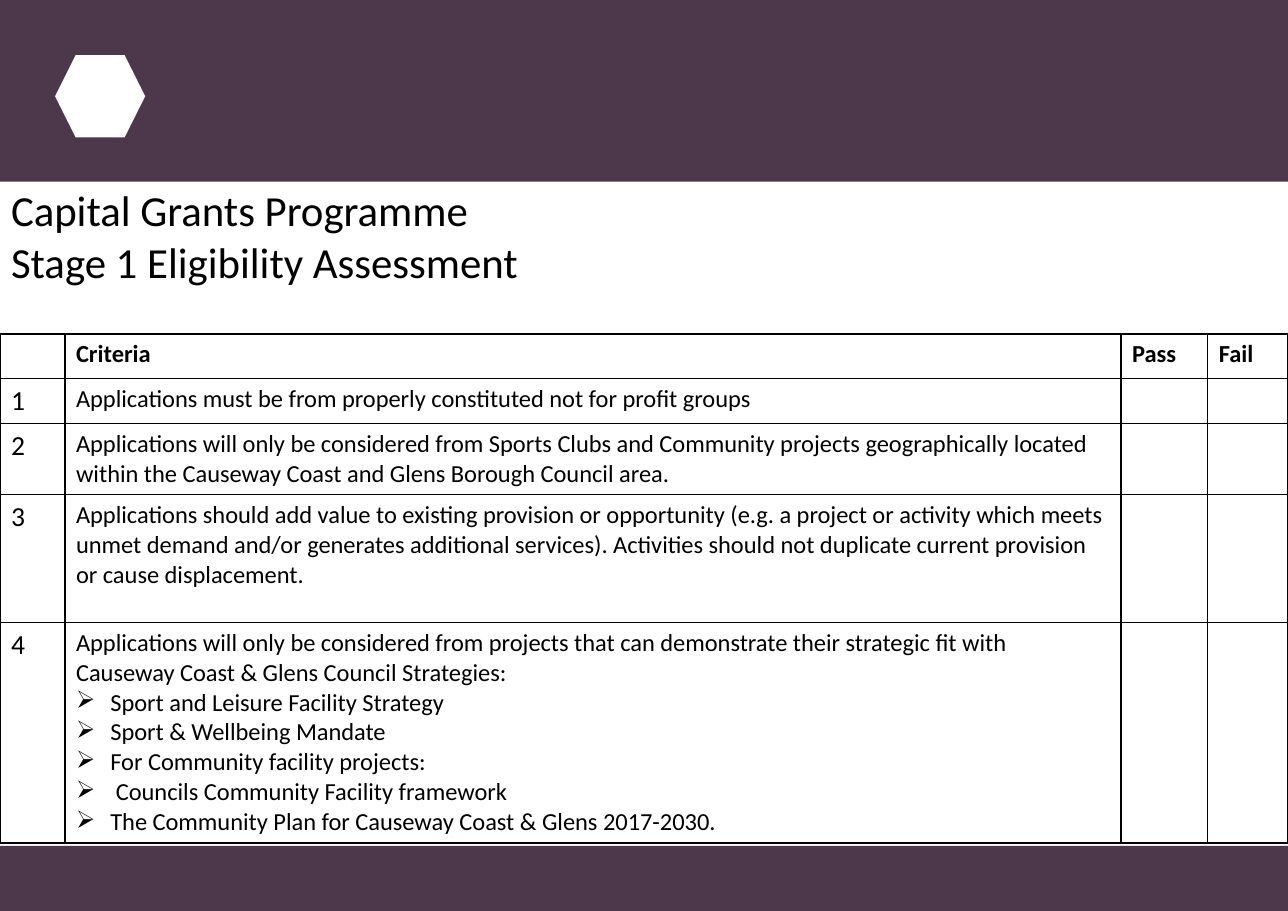
from lxml import etree
from pptx import Presentation
from pptx.dml.color import RGBColor
from pptx.enum.shapes import MSO_SHAPE
from pptx.enum.text import MSO_ANCHOR, MSO_AUTO_SIZE, PP_ALIGN
from pptx.oxml.ns import qn
from pptx.util import Cm, Pt

RECTANGLE = MSO_SHAPE.RECTANGLE
HEXAGON = MSO_SHAPE.HEXAGON
TOP = MSO_ANCHOR.TOP
LEFT = PP_ALIGN.LEFT
NO_AUTOFIT = MSO_AUTO_SIZE.NONE

PLUM = RGBColor(0x4C, 0x37, 0x4B)
WHITE = RGBColor(0xFF, 0xFF, 0xFF)
BLACK = RGBColor(0x00, 0x00, 0x00)
FONT = "Calibri"
TITLE_ONLY = 5

SLIDE_WIDTH, SLIDE_HEIGHT = Cm(29.7), Cm(21)
HEADER_HEIGHT = Cm(4.19)
FOOTER_HEIGHT = Cm(1.5)
COLUMN_WIDTHS = [Cm(1.5), Cm(24.35), Cm(2), Cm(1.85)]
ROW_HEIGHTS = [Cm(1.03), Cm(1.03), Cm(1.62), Cm(2.95), Cm(5)]

TITLE_LINES = ["Capital Grants Programme", "Stage 1 Eligibility Assessment"]
HEADINGS = ["", "Criteria", "Pass", "Fail"]
CRITERIA = [
    "Applications must be from properly constituted not for profit groups",
    "Applications will only be considered from Sports Clubs and Community projects "
    "geographically located within the Causeway Coast and Glens Borough Council area.",
    "Applications should add value to existing provision or opportunity (e.g. a project "
    "or activity which meets unmet demand and/or generates additional services). "
    "Activities should not duplicate current provision or cause displacement.",
    "Applications will only be considered from projects that can demonstrate their "
    "strategic fit with Causeway Coast & Glens Council Strategies:",
]
STRATEGIES = [
    "Sport and Leisure Facility Strategy",
    "Sport & Wellbeing Mandate",
    "For Community facility projects:",
    " Councils Community Facility framework",
    "The Community Plan for Causeway Coast & Glens 2017-2030.",
]


def format_paragraph(paragraph, size, bold=False):
    paragraph.alignment = LEFT
    font = paragraph.font
    font.name = FONT
    font.size = Pt(size)
    font.bold = bold
    font.color.rgb = BLACK


def add_bullet(paragraph):
    properties = paragraph._p.get_or_add_pPr()
    properties.set("marL", str(Cm(0.79)))
    properties.set("indent", str(-Cm(0.79)))
    etree.SubElement(properties, qn("a:buChar"), char="➢")


def add_plain_shape(slide, preset, box, color):
    shape = slide.shapes.add_shape(preset, *box)
    shape.shadow.inherit = False
    shape.fill.solid()
    shape.fill.fore_color.rgb = color
    shape.line.fill.background()


def add_header(slide, left, top, width, height):
    add_plain_shape(slide, RECTANGLE, (left, top, width, height), PLUM)
    emblem_box = (left + Cm(1.27), top + Cm(1.27), Cm(2.08), Cm(1.9))
    add_plain_shape(slide, HEXAGON, emblem_box, WHITE)


def add_footer(slide, left, top, width, height):
    add_plain_shape(slide, RECTANGLE, (left, top, width, height), PLUM)


def place_title(slide, left, top, width, height):
    title = slide.shapes.title
    title.left, title.top, title.width, title.height = left, top, width, height
    frame = title.text_frame
    frame.text = "\n".join(TITLE_LINES)
    frame.word_wrap = True
    frame.auto_size = NO_AUTOFIT
    frame.vertical_anchor = TOP
    for paragraph in frame.paragraphs:
        format_paragraph(paragraph, 28)


def style_cell(cell):
    properties = cell._tc.get_or_add_tcPr()
    for side in ("lnL", "lnR", "lnT", "lnB"):
        line = etree.SubElement(properties, qn(f"a:{side}"), w=str(Pt(1)))
        fill = etree.SubElement(line, qn("a:solidFill"))
        etree.SubElement(fill, qn("a:srgbClr"), val=str(BLACK))
    cell.fill.solid()
    cell.fill.fore_color.rgb = WHITE
    cell.vertical_anchor = TOP


def add_criteria_table(slide, left, top, width, height):
    rows = [HEADINGS]
    rows += [[str(number), text, "", ""] for number, text in enumerate(CRITERIA, 1)]
    table = slide.shapes.add_table(
        len(rows), len(HEADINGS), left, top, width, height
    ).table
    table.first_row = False
    table.horz_banding = False
    for column, column_width in zip(table.columns, COLUMN_WIDTHS):
        column.width = column_width
    for row, row_height in zip(table.rows, ROW_HEIGHTS):
        row.height = row_height
    for row_index, texts in enumerate(rows):
        for column_index, text in enumerate(texts):
            cell = table.cell(row_index, column_index)
            style_cell(cell)
            cell.text = text
            size = 18 if column_index == 0 else 16
            format_paragraph(cell.text_frame.paragraphs[0], size, row_index == 0)
    strategy_frame = table.cell(len(CRITERIA), 1).text_frame
    for strategy in STRATEGIES:
        paragraph = strategy_frame.add_paragraph()
        paragraph.text = strategy
        add_bullet(paragraph)
        format_paragraph(paragraph, 16)


def main():
    presentation = Presentation()
    presentation.slide_width = SLIDE_WIDTH
    presentation.slide_height = SLIDE_HEIGHT
    slide = presentation.slides.add_slide(presentation.slide_layouts[TITLE_ONLY])
    add_header(slide, 0, 0, SLIDE_WIDTH, HEADER_HEIGHT)
    add_footer(slide, 0, SLIDE_HEIGHT - FOOTER_HEIGHT, SLIDE_WIDTH, FOOTER_HEIGHT)
    place_title(slide, 0, Cm(4.11), Cm(24), Cm(2.65))
    add_criteria_table(slide, 0, Cm(7.7), SLIDE_WIDTH, sum(ROW_HEIGHTS))
    presentation.save("out.pptx")


if __name__ == "__main__":
    main()
